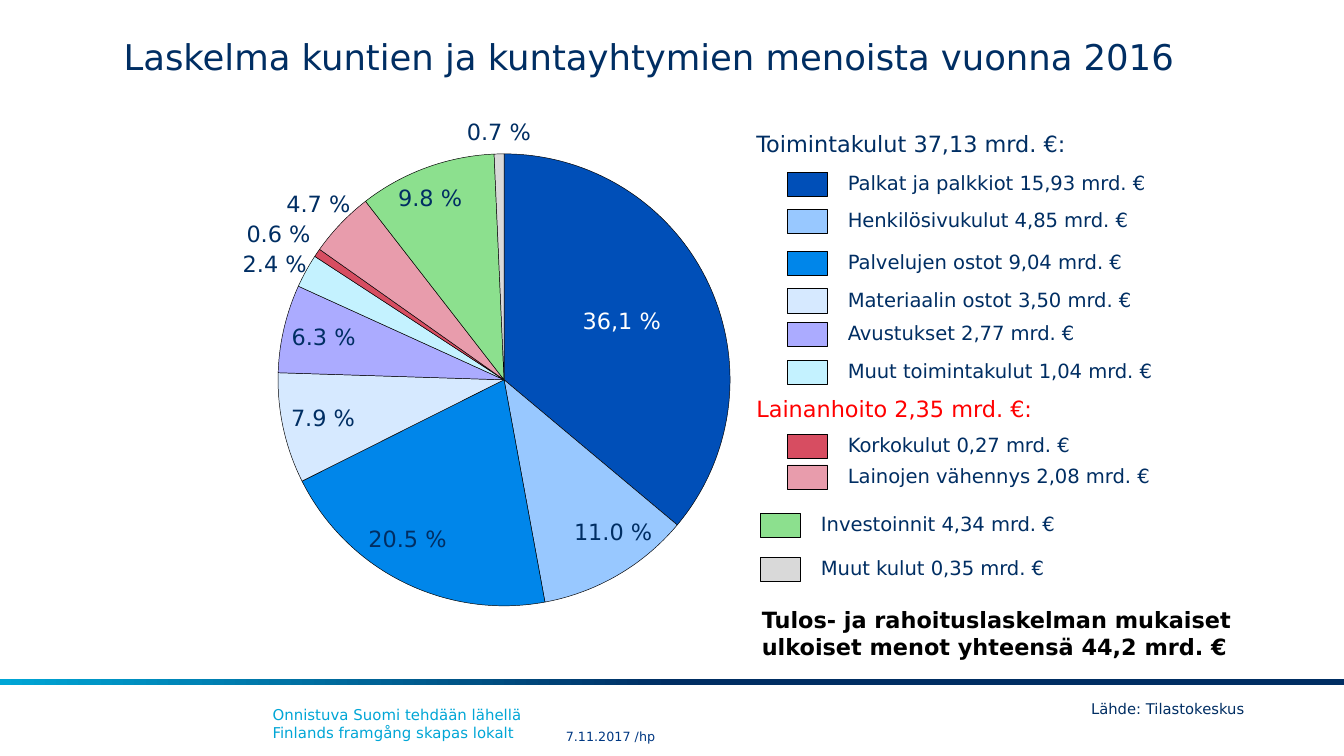
from dataclasses import dataclass

from pptx import Presentation
from pptx import util as u
from pptx.chart.data import CategoryChartData
from pptx.dml.color import RGBColor
from pptx.enum import chart as charts, shapes, text
from pptx.oxml import parse_xml
from pptx.oxml.ns import nsdecls


@dataclass(frozen=True)
class Theme:
    font: str = "DejaVu Sans"
    navy: str = "002E63"
    date_blue: str = "003882"
    cyan: str = "00A6D6"
    red: str = "FF0000"
    black: str = "000000"
    white: str = "FFFFFF"
    title: float = 19
    heading: float = 12
    legend: float = 10.5
    footer: float = 8
    source: float = 7.9
    date: float = 6.8


def manual_layout(content):
    return parse_xml(f'<c:layout {nsdecls("c")}><c:manualLayout>{content}'
                     '</c:manualLayout></c:layout>')


class SlideBuilder:
    def __init__(self, slide, theme):
        self.slide = slide
        self.theme = theme

    def style(self, font, size, color, bold=False):
        font.name = self.theme.font
        font.size = u.Pt(size)
        font.bold = bold
        font.color.rgb = RGBColor.from_string(color)

    def title(self, words, left, top, width, height):
        box = self.slide.shapes.title
        box.left, box.top = u.Inches(left), u.Inches(top)
        box.width, box.height = u.Inches(width), u.Inches(height)
        frame = box.text_frame
        frame.text = words
        frame.auto_size = text.MSO_AUTO_SIZE.NONE
        frame.vertical_anchor = text.MSO_ANCHOR.BOTTOM
        frame.margin_left = frame.margin_right = 0
        para = frame.paragraphs[0]
        para.alignment = text.PP_ALIGN.LEFT
        self.style(para.font, self.theme.title, self.theme.navy)

    def label(self, words, left, top, width, height, size, color=None,
              bold=False, wrap=False, inset=True):
        box = self.slide.shapes.add_textbox(
            u.Inches(left), u.Inches(top), u.Inches(width), u.Inches(height))
        frame = box.text_frame
        frame.text = words
        frame.word_wrap = wrap
        if not inset:
            frame.margin_left = frame.margin_right = 0
            frame.margin_top = frame.margin_bottom = 0
            frame.vertical_anchor = text.MSO_ANCHOR.MIDDLE
        for para in frame.paragraphs:
            self.style(para.font, size, color or self.theme.navy, bold)

    def rectangle(self, left, top, width, height):
        shape = self.slide.shapes.add_shape(
            shapes.MSO_SHAPE.RECTANGLE, u.Inches(left), u.Inches(top),
            u.Inches(width), u.Inches(height))
        shape.shadow.inherit = False
        return shape

    def gradient_band(self, left, top, width, height):
        band = self.rectangle(left, top, width, height)
        band.line.fill.background()
        band.fill.gradient()
        band.fill.gradient_angle = 180
        stops = ((0.5, self.theme.navy), (1, self.theme.cyan))
        for stop, (position, color) in zip(band.fill.gradient_stops, stops):
            stop.position = position
            stop.color.rgb = RGBColor.from_string(color)

    def legend_row(self, words, left, top, width, color):
        swatch = self.rectangle(left, top, 0.3, 0.18)
        swatch.fill.solid()
        swatch.fill.fore_color.rgb = RGBColor.from_string(color)
        swatch.line.color.rgb = RGBColor.from_string(self.theme.black)
        swatch.line.width = u.Pt(0.5)
        self.label(words, left + 0.35, top - 0.06, width, 0.28, self.theme.legend)

    def pie(self, slices, left, top, width, height):
        data = CategoryChartData(number_format="0.0%")
        data.categories = [str(number + 1) for number in range(len(slices))]
        data.add_series("Series 1", [item[0] for item in slices])
        chart = self.slide.shapes.add_chart(
            charts.XL_CHART_TYPE.PIE, u.Inches(left), u.Inches(top),
            u.Inches(width), u.Inches(height), data).chart
        chart.has_legend = chart.has_title = False
        self.style(chart.font, self.theme.heading, self.theme.navy)
        plot = chart.plots[0]
        plot.vary_by_categories = True
        series = plot.series[0]

        labels = series.data_labels
        labels.show_value = True
        labels.number_format = r"0.0\ %"
        labels.number_format_is_linked = False
        self.style(labels.font, self.theme.heading, self.theme.navy)

        for index, (share, color, place, shift) in enumerate(slices):
            point = series.points[index]
            point.format.fill.solid()
            point.format.fill.fore_color.rgb = RGBColor.from_string(color)
            point.format.line.color.rgb = RGBColor.from_string(self.theme.black)
            point.format.line.width = u.Pt(0.25)
            if index:
                self.style(point.data_label.font, self.theme.heading, self.theme.navy)
            else:
                para = point.data_label.text_frame.paragraphs[0]
                span = para.add_run()
                span.text = "36,1 %"
                self.style(span.font, self.theme.heading, self.theme.white)
            point.data_label.position = place

        # Label shifts, as fractions of the chart frame, without leader lines
        space = chart._chartSpace
        for label, (share, color, place, shift) in zip(space.xpath(".//c:dLbl"), slices):
            if any(shift):
                label.insert(1, manual_layout(
                    f'<c:x val="{shift[0]}"/><c:y val="{shift[1]}"/>'))
        for leader in space.xpath(".//c:showLeaderLines"):
            leader.set("val", "0")

        # Fixed plot area, as fractions of the chart frame
        area = space.chart.plotArea
        for old in area.xpath("c:layout"):
            area.remove(old)
        area.insert(0, manual_layout(
            '<c:layoutTarget val="inner"/><c:xMode val="edge"/><c:yMode val="edge"/>'
            '<c:x val="0.204"/><c:y val="0.098"/><c:w val="0.587"/><c:h val="0.835"/>'))


def main():
    deck = Presentation()
    # Widescreen, 16:9
    deck.slide_width, deck.slide_height = u.Inches(10), u.Inches(10 * 9 / 16)
    theme = Theme()
    page = SlideBuilder(deck.slides.add_slide(deck.slide_layouts[5]), theme)

    # Footer band and texts
    page.gradient_band(0, 5.05, 10, 0.05)
    page.label("Onnistuva Suomi tehdään lähellä\vFinlands framgång skapas lokalt",
               1.93, 5.2, 6.54, 0.37, theme.footer, theme.cyan, wrap=True)
    page.label("7.11.2017 /hp", 4.21, 5.39, 1.11, 0.18, theme.date,
               theme.date_blue, wrap=True, inset=False)
    page.label("Lähde: Tilastokeskus", 8.02, 5.16, 1.37, 0.23, theme.source)

    page.title("Laskelma kuntien ja kuntayhtymien menoista vuonna 2016",
               0.92, 0.1, 7.91, 0.53)

    # Expenditure: share, colour, label place and shift; legend text, left, top, width
    place = charts.XL_LABEL_POSITION
    middle, inside, outside = place.CENTER, place.INSIDE_END, place.OUTSIDE_END
    items = [
        (0.361, "004FB8", middle, (0.02, -0.02),
         "Palkat ja palkkiot 15,93 mrd. €", 5.86, 1.28, 2.6),
        (0.11, "98C8FF", inside, (0.05, -0.04),
         "Henkilösivukulut 4,85 mrd. €", 5.86, 1.56, 2.45),
        (0.205, "0086EA", inside, (-0.05, -0.04),
         "Palvelujen ostot 9,04 mrd. €", 5.86, 1.87, 2.32),
        (0.079, "D6E9FF", inside, (0, 0.01),
         "Materiaalin ostot 3,50 mrd. €", 5.86, 2.15, 2.47),
        (0.063, "ABABFF", inside, (0, -0.01),
         "Avustukset 2,77 mrd. €", 5.86, 2.4, 1.96),
        (0.024, "C4F2FF", outside, (0.01, 0.02),
         "Muut toimintakulut 1,04 mrd. €", 5.86, 2.68, 2.54),
        (0.006, "D74D61", outside, (0, 0),
         "Korkokulut 0,27 mrd. €", 5.86, 3.23, 2),
        (0.047, "E89CAC", outside, (0.02, 0),
         "Lainojen vähennys 2,08 mrd. €", 5.86, 3.46, 2.52),
        (0.098, "8CE08E", inside, (-0.04, 0.02),
         "Investoinnit 4,34 mrd. €", 5.66, 3.82, 2.02),
        (0.007, "D9D9D9", outside, (0, 0),
         "Muut kulut 0,35 mrd. €", 5.66, 4.15, 1.99),
    ]
    page.pie([item[:4] for item in items], 0.9, 0.75, 5.73, 4.03)

    # Legend with group headings and total
    for share, color, spot, shift, words, left, top, width in items:
        page.legend_row(words, left, top, width, color)
    page.label("Toimintakulut 37,13 mrd. €:", 5.53, 0.92, 2.6, 0.3, theme.heading)
    page.label("Lainanhoito 2,35 mrd. €:", 5.53, 2.89, 2.33, 0.3,
               theme.heading, theme.red)
    page.label("Tulos- ja rahoituslaskelman mukaiset\nulkoiset menot yhteensä 44,2 mrd. €",
               5.57, 4.46, 3.76, 0.5, theme.heading, theme.black, bold=True)

    deck.save("out.pptx")


if __name__ == "__main__":
    main()
